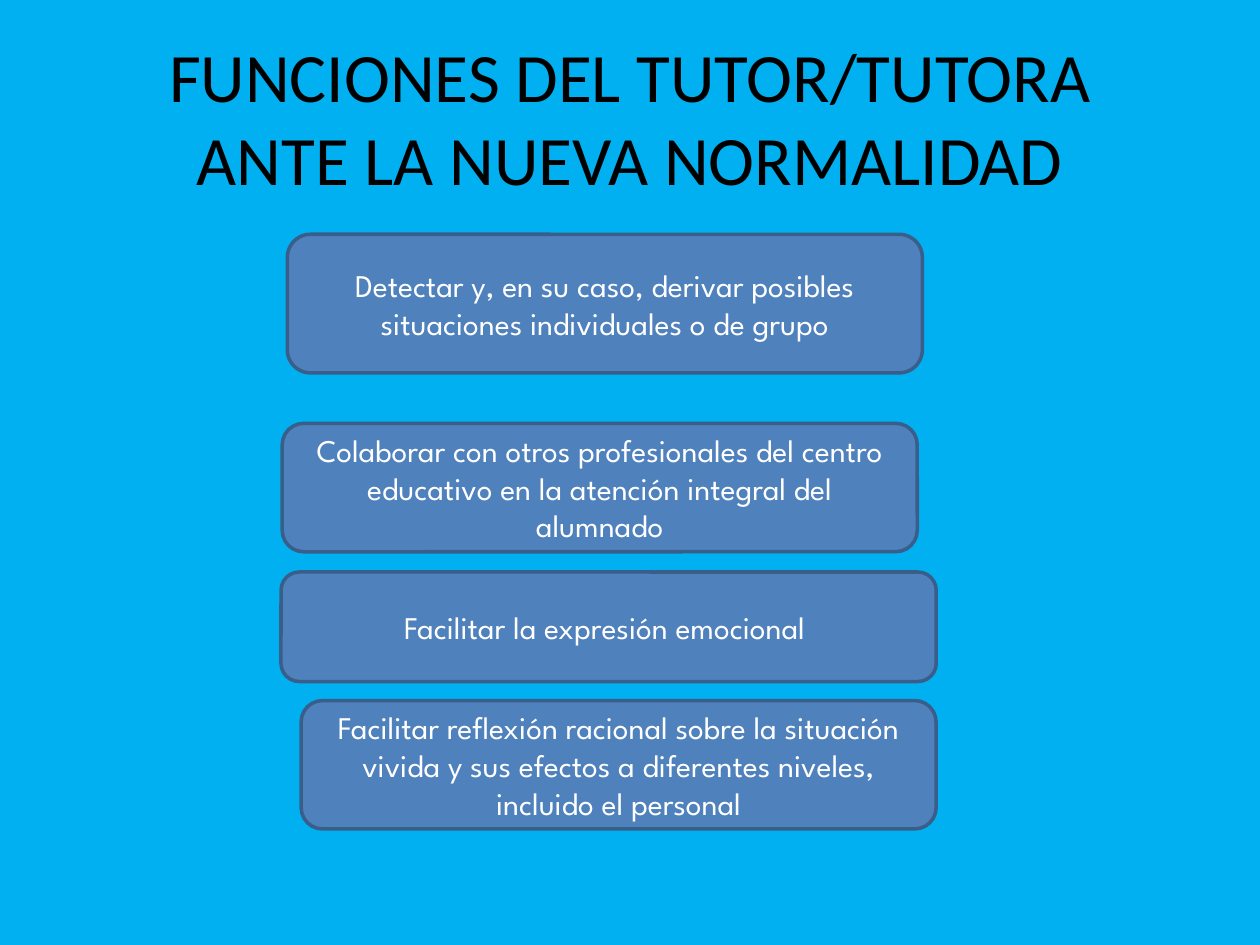
from dataclasses import dataclass

from pptx import Presentation
from pptx.dml.color import RGBColor
from pptx.enum import shapes, text
from pptx.util import Pt


@dataclass
class Theme:
    back: str = "00B0F0"
    fill: str = "4F81BD"
    edge: str = "395E89"
    dark: str = "000000"
    light: str = "FFFFFF"
    head: float = 39.6
    body: float = 18


theme = Theme()


def add_run(para, words, face, size, color):
    run = para.add_run()
    run.text = words
    run.font.name = face
    run.font.size = Pt(size)
    run.font.color.rgb = RGBColor.from_string(color)


def set_frame(frame):
    frame.word_wrap = True
    frame.auto_size = text.MSO_AUTO_SIZE.NONE
    frame.vertical_anchor = text.MSO_ANCHOR.MIDDLE
    frame.margin_left = frame.margin_right = Pt(7.2)
    frame.margin_top = frame.margin_bottom = Pt(3.6)
    para = frame.paragraphs[0]
    para.alignment = text.PP_ALIGN.CENTER
    return para


deck = Presentation()
deck.slide_width = Pt(720)
deck.slide_height = Pt(540)
slide = deck.slides.add_slide(deck.slide_layouts[5])
slide.background.fill.solid()
slide.background.fill.fore_color.rgb = RGBColor.from_string(theme.back)

title = slide.shapes.title
title.left, title.top, title.width, title.height = Pt(36), Pt(21.6), Pt(648), Pt(90)
para = set_frame(title.text_frame)
add_run(para, "FUNCIONES DEL TUTOR/TUTORA", "Calibri", theme.head, theme.dark)
para.add_line_break()
add_run(para, "ANTE LA NUEVA NORMALIDAD", "Calibri", theme.head, theme.dark)

tasks = [
    (164.2, 133.9, 362.9, 79.2,
     "Detectar y, en su caso, derivar posibles situaciones individuales o de grupo"),
    (161.3, 241.9, 362.9, 73.4,
     "Colaborar con otros profesionales del centro educativo en la atención integral del alumnado"),
    (172.1, 400.3, 362.9, 73.4,
     "Facilitar reflexión racional sobre la situación vivida y sus efectos a diferentes niveles, incluido el personal"),
    (160.6, 326.9, 374.4, 62.6, "Facilitar la expresión emocional "),
]
for left, top, width, height, words in tasks:
    box = slide.shapes.add_shape(
        shapes.MSO_SHAPE.ROUNDED_RECTANGLE, Pt(left), Pt(top), Pt(width), Pt(height))
    box.adjustments[0] = 0.167
    box.shadow.inherit = False
    box.fill.solid()
    box.fill.fore_color.rgb = RGBColor.from_string(theme.fill)
    box.line.color.rgb = RGBColor.from_string(theme.edge)
    box.line.width = Pt(2)
    para = set_frame(box.text_frame)
    add_run(para, words, "League Spartan", theme.body, theme.light)

deck.save("out.pptx")
